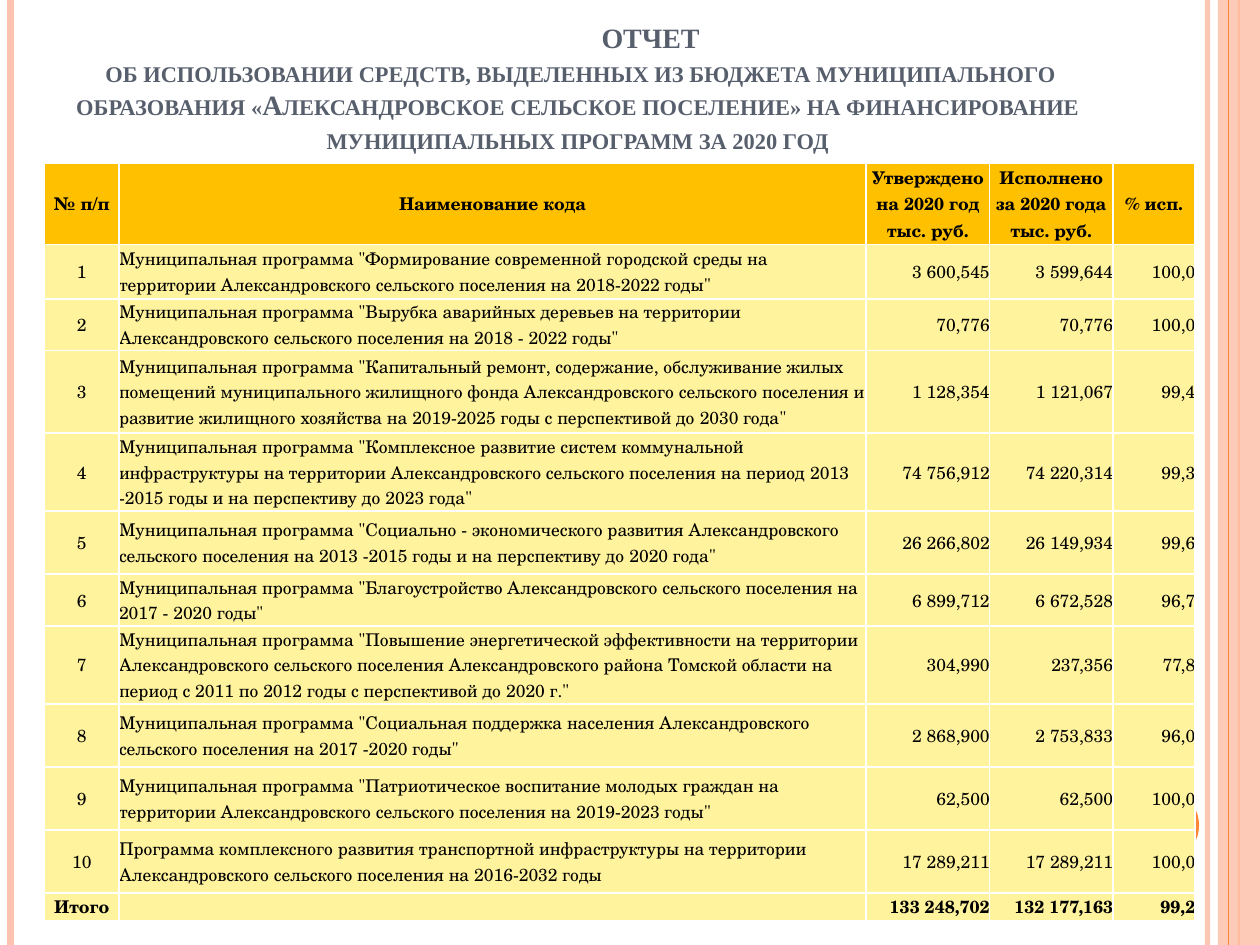
from lxml.etree import SubElement
from pptx import Presentation
from pptx.dml.color import RGBColor
from pptx.enum.shapes import MSO_CONNECTOR, MSO_SHAPE
from pptx.enum.text import MSO_ANCHOR, PP_ALIGN
from pptx.oxml.ns import qn
from pptx.util import Pt

COLORS = {
    "title": "575F6D", "text": "000000", "header": "FFC000", "body": "FFF39D",
    "border": "FFFFFF", "pink": "FEC3AE", "orange": "FE8637",
}
TITLE_FONT, TABLE_FONT = "Times New Roman", "TeX Gyre Schola"
SLIDE_WIDTH, SLIDE_HEIGHT = 720, 540

TITLE = (
    "ОТЧЕТ\v об использовании средств, выделенных из бюджета муниципального "
    "образования «Александровское сельское поселение» на финансирование "
    "муниципальных программ за 2020 год"
)
HEADER = ("№ п/п", "Наименование кода", "Утверждено на 2020 год тыс. руб.",
          "Исполнено за 2020 года тыс. руб.", "% исп.")
PROGRAMS = [
    ('Муниципальная программа "Формирование современной городской среды на территории '
     'Александровского сельского поселения на 2018-2022 годы"',
     "3 600,545", "3 599,644", "100,0"),
    ('Муниципальная программа "Вырубка аварийных деревьев на территории '
     'Александровского сельского поселения на 2018 - 2022 годы"',
     "70,776", "70,776", "100,0"),
    ('Муниципальная программа "Капитальный ремонт, содержание, обслуживание жилых '
     'помещений муниципального жилищного фонда Александровского сельского поселения и '
     'развитие жилищного хозяйства на 2019-2025 годы с перспективой до 2030 года"',
     "1 128,354", "1 121,067", "99,4"),
    ('Муниципальная программа "Комплексное развитие систем коммунальной '
     'инфраструктуры на территории Александровского сельского поселения на период 2013 '
     '-2015 годы и на перспективу до 2023 года"',
     "74 756,912", "74 220,314", "99,3"),
    ('Муниципальная программа "Социально - экономического развития Александровского '
     'сельского поселения на 2013 -2015 годы и на перспективу до 2020 года"',
     "26 266,802", "26 149,934", "99,6"),
    ('Муниципальная программа "Благоустройство Александровского сельского поселения на '
     '2017 - 2020 годы"',
     "6 899,712", "6 672,528", "96,7"),
    ('Муниципальная программа "Повышение энергетической эффективности на территории '
     'Александровского сельского поселения Александровского района Томской области на '
     'период с 2011 по 2012 годы с перспективой до 2020 г."',
     "304,990", "237,356", "77,8"),
    ('Муниципальная программа "Социальная поддержка населения Александровского '
     'сельского поселения на 2017 -2020 годы"',
     "2 868,900", "2 753,833", "96,0"),
    ('Муниципальная программа "Патриотическое воспитание молодых граждан на '
     'территории Александровского сельского поселения на 2019-2023 годы"',
     "62,500", "62,500", "100,0"),
    ('Программа комплексного развития транспортной инфраструктуры на территории '
     'Александровского сельского поселения на 2016-2032 годы',
     "17 289,211", "17 289,211", "100,0"),
]
TOTAL = ("Итого", "", "133 248,702", "132 177,163", "99,2")

TABLE_LEFT, TABLE_TOP = 25.5, 93.4
COLUMN_WIDTHS = (42.5, 427, 70.5, 70.5, 47)
ROW_HEIGHTS = (46.4, 31.2, 29.2, 47.4, 44.6, 36, 29.6, 44.6, 36, 36, 36, 15.6)
COLUMN_ALIGNS = (PP_ALIGN.CENTER, PP_ALIGN.LEFT) + (PP_ALIGN.RIGHT,) * 3

# x, width, colour, opacity in percent
STRIPES_BEHIND = [(690, 3, "pink", 93), (6, 4.5, "pink", 100), (708, 1.5, "orange", 100)]
STRIPE_IN_FRONT = (702, 0.75, "orange", 100)


def color(name):
    return RGBColor.from_string(COLORS[name])


def set_opacity(element, percent):
    for color_element in element.iter(qn("a:srgbClr")):
        SubElement(color_element, qn("a:alpha"), val=str(percent * 1000))


def write_text(frame, text, font, size, ink="text", bold=False, align=PP_ALIGN.LEFT):
    """Put the text into the first paragraph; each \\v becomes a line break."""
    paragraph = frame.paragraphs[0]
    paragraph.alignment = align
    if not text:
        # The size of an empty paragraph still sets the least row height.
        SubElement(paragraph._p, qn("a:endParaRPr"), sz=str(size * 100))
        return paragraph
    for index, line in enumerate(text.split("\v")):
        if index:
            paragraph.add_line_break()
        run = paragraph.add_run()
        run.text = line
        run.font.name, run.font.size, run.font.bold = font, Pt(size), bold
        run.font.color.rgb = color(ink)
    return paragraph


def add_stripe(shapes, x, width, ink, opacity):
    stripe = shapes.add_connector(MSO_CONNECTOR.STRAIGHT, Pt(x), 0, Pt(x), Pt(SLIDE_HEIGHT))
    stripe.line.width = Pt(width)
    stripe.line.color.rgb = color(ink)
    properties = stripe._element.spPr
    if opacity < 100:
        set_opacity(properties, opacity)
    SubElement(properties, qn("a:effectLst"))


def add_plain_shape(shapes, kind, box, ink):
    shape = shapes.add_shape(kind, *(Pt(value) for value in box))
    shape.shadow.inherit = False
    shape.fill.solid()
    shape.fill.fore_color.rgb = color(ink)
    shape.line.fill.background()
    return shape


def add_frame(shapes):
    for stripe in STRIPES_BEHIND:
        add_stripe(shapes, *stripe)
    band = add_plain_shape(shapes, MSO_SHAPE.RECTANGLE, (696, 0, 24, SLIDE_HEIGHT), "pink")
    set_opacity(band._element.spPr, 87)
    add_stripe(shapes, *STRIPE_IN_FRONT)
    add_plain_shape(shapes, MSO_SHAPE.OVAL, (642, 450, 43.2, 43.2), "orange")


def add_title(shapes):
    frame = shapes.add_textbox(Pt(36), Pt(21.6), Pt(588), Pt(90)).text_frame
    frame.word_wrap = True
    frame.vertical_anchor = MSO_ANCHOR.BOTTOM
    frame.margin_left = frame.margin_right = Pt(5)
    frame.margin_bottom = Pt(23)
    paragraph = write_text(frame, TITLE, TITLE_FONT, 16, ink="title", bold=True,
                           align=PP_ALIGN.CENTER)
    paragraph.line_spacing = Pt(19.2)
    paragraph._p.get_or_add_pPr().set("indent", str(Pt(27.5)))
    for run in paragraph.runs:
        run.font._element.set("cap", "small")


def set_borders(cell):
    properties = cell._tc.get_or_add_tcPr()
    for position, side in enumerate(("lnL", "lnR", "lnT", "lnB")):
        border = properties.makeelement(qn(f"a:{side}"), {"w": str(Pt(1))})
        fill = SubElement(border, qn("a:solidFill"))
        SubElement(fill, qn("a:srgbClr"), val=COLORS["border"])
        properties.insert(position, border)


def add_program_table(shapes):
    rows = [HEADER]
    rows += [(str(number), *program) for number, program in enumerate(PROGRAMS, 1)]
    rows.append(TOTAL)
    table = shapes.add_table(
        len(rows), len(HEADER), Pt(TABLE_LEFT), Pt(TABLE_TOP),
        Pt(sum(COLUMN_WIDTHS)), Pt(sum(ROW_HEIGHTS))).table
    table.first_row = table.horz_banding = False
    for column, width in zip(table.columns, COLUMN_WIDTHS):
        column.width = Pt(width)
    for row, height in zip(table.rows, ROW_HEIGHTS):
        row.height = Pt(height)

    for row_index, values in enumerate(rows):
        is_header, is_total = values is HEADER, values is TOTAL
        for column_index, value in enumerate(values):
            cell = table.cell(row_index, column_index)
            cell.margin_left = cell.margin_right = cell.margin_top = cell.margin_bottom = 0
            cell.vertical_anchor = MSO_ANCHOR.BOTTOM if is_total else MSO_ANCHOR.MIDDLE
            cell.fill.solid()
            cell.fill.fore_color.rgb = color("header" if is_header else "body")
            set_borders(cell)
            write_text(cell.text_frame, value, TABLE_FONT, 10, bold=is_header or is_total,
                       align=PP_ALIGN.CENTER if is_header else COLUMN_ALIGNS[column_index])


def main():
    presentation = Presentation()
    presentation.slide_width, presentation.slide_height = Pt(SLIDE_WIDTH), Pt(SLIDE_HEIGHT)
    shapes = presentation.slides.add_slide(presentation.slide_layouts[6]).shapes
    add_frame(shapes)
    add_title(shapes)
    add_program_table(shapes)
    presentation.save("out.pptx")


if __name__ == "__main__":
    main()
